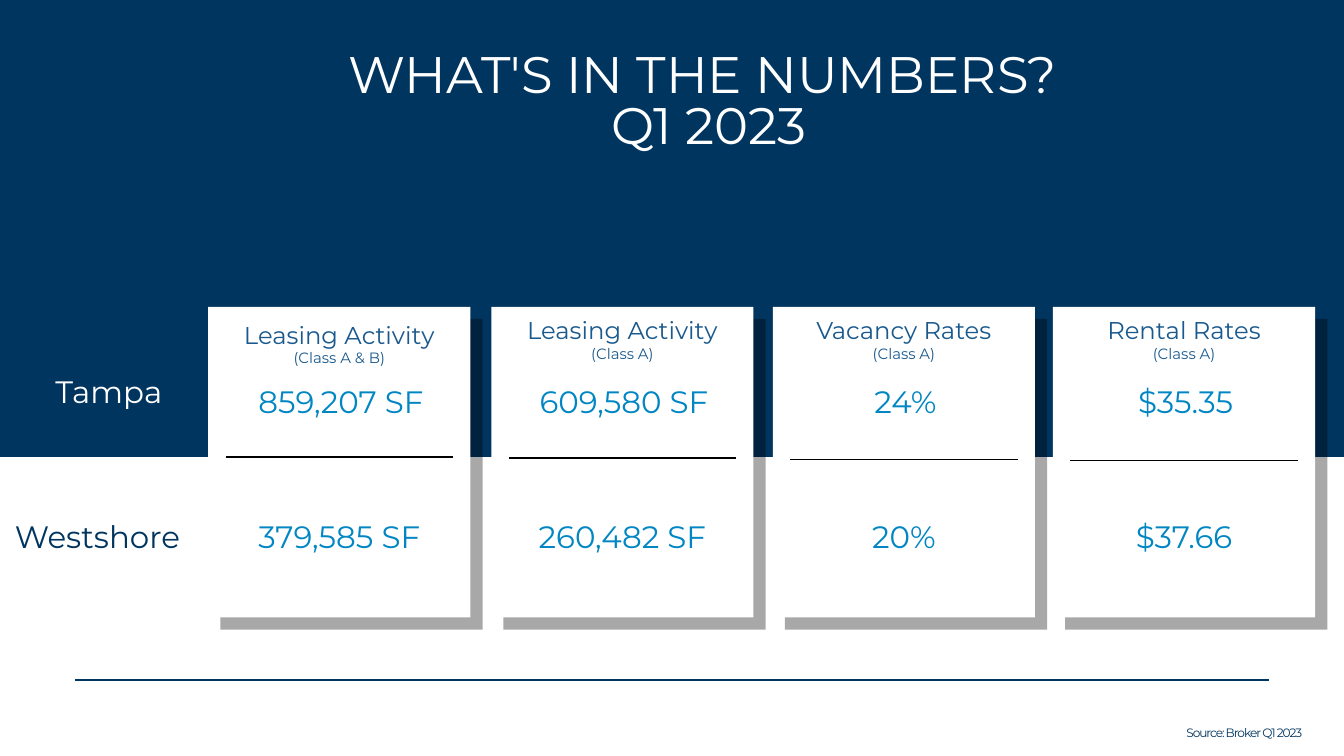
import pptx
import pptx.dml.color
import pptx.enum.shapes
import pptx.enum.text
import pptx.util
from lxml import etree
from pptx.oxml.ns import qn

Cm, Pt = pptx.util.Cm, pptx.util.Pt
RGBColor = pptx.dml.color.RGBColor

NAVY = RGBColor(0x00, 0x35, 0x5F)
HEADING_BLUE = RGBColor(0x19, 0x59, 0x8D)
VALUE_BLUE = RGBColor(0x00, 0x86, 0xC3)
WHITE = RGBColor(0xFF, 0xFF, 0xFF)
BLACK = RGBColor(0x00, 0x00, 0x00)

TITLE = ["WHAT'S IN THE NUMBERS? ", "Q1 2023"]
SOURCE = "Source: Broker Q1 2023"
# region, colour, label left, label top, label width
REGIONS = [
    ("Tampa", WHITE, 1.78, 13.87, 4.67),
    ("Westshore", NAVY, 0, 19.35, 7.37),
]
# card left, heading, class, heading line spacing, values by region, value width
CARDS = [
    (7.87, "Leasing Activity", "(Class A & B)", 36.4, ("859,207 SF", "379,585 SF"), 6.3),
    (18.57, "Leasing Activity", "(Class A)", None, ("609,580 SF", "260,482 SF"), 6.5),
    (29.21, "Vacancy Rates", "(Class A)", None, ("24%", "20%"), 4.5),
    (39.8, "Rental Rates", "(Class A)", None, ("$35.35", "$37.66"), 3.85),
]
VALUE_TOPS = [14.25, 19.33]
VALUE_SHIFTS = [0.06, 0]

CARD_TOP, CARD_WIDTH, CARD_HEIGHT = 11.6, 9.91, 11.74
SHADOW_SHIFT = 0.46
INSET = 0.66
RULE_TOP, RULE_STEP = 17.27, 0.05

deck = pptx.Presentation()
deck.slide_width, deck.slide_height = Cm(50.8), Cm(28.58)
page = deck.slides.add_slide(deck.slide_layouts[6])


def add_rectangle(left, top, width, height, color, opacity=None):
    shape = page.shapes.add_shape(
        pptx.enum.shapes.MSO_SHAPE.RECTANGLE, Cm(left), Cm(top), Cm(width), Cm(height))
    shape.shadow.inherit = False
    shape.fill.solid()
    shape.fill.fore_color.rgb = color
    shape.line.fill.background()
    if opacity is not None:
        fill_color = shape._element.spPr.find(".//" + qn("a:srgbClr"))
        etree.SubElement(fill_color, qn("a:alpha")).set("val", str(opacity * 1000))


def add_rule(left, top, width, color, weight):
    rule = page.shapes.add_connector(
        pptx.enum.shapes.MSO_CONNECTOR.STRAIGHT, Cm(left), Cm(top), Cm(left + width), Cm(top))
    rule.line.color.rgb = color
    rule.line.width = Pt(weight)
    etree.SubElement(rule._element.spPr, qn("a:effectLst"))


def add_text(left, top, width, height, color, lines, tracking=None):
    """Add centred text; each line is (text, size, line spacing or None)."""
    box = page.shapes.add_textbox(Cm(left), Cm(top), Cm(width), Cm(height))
    frame = box.text_frame
    frame.word_wrap = True
    for side in ("left", "top", "right", "bottom"):
        setattr(frame, "margin_" + side, 0)
    for index, (text, size, spacing) in enumerate(lines):
        para = frame.paragraphs[0] if index == 0 else frame.add_paragraph()
        para.alignment = pptx.enum.text.PP_ALIGN.CENTER
        if spacing:
            para.line_spacing = Pt(spacing)
        span = para.add_run()
        span.text = text
        for name, value in {"name": "Montserrat", "size": Pt(size)}.items():
            setattr(span.font, name, value)
        span.font.color.rgb = color
        if tracking:
            span.font._element.set("spc", str(round(tracking * 100)))


add_rectangle(0, 0, 50.8, 17.27, NAVY)
for left, *_ in CARDS:
    add_rectangle(left + SHADOW_SHIFT, CARD_TOP + SHADOW_SHIFT,
                  CARD_WIDTH, CARD_HEIGHT, BLACK, opacity=34)
for left, *_ in CARDS:
    add_rectangle(left, CARD_TOP, CARD_WIDTH, CARD_HEIGHT, WHITE)

add_text(11.3, 1.98, 31.01, 3.96, WHITE, [(line, 55, 55) for line in TITLE])

for column, (left, heading, grade, spacing, values, value_width) in enumerate(CARDS):
    inner_width = CARD_WIDTH - 2 * INSET
    add_text(left + INSET, 11.91, inner_width, 1.9, HEADING_BLUE,
             [(heading, 26, spacing), (grade, 16, None)])
    add_rule(left + INSET, RULE_TOP + column * RULE_STEP, inner_width, BLACK, 1.5)
    value_left = left + (CARD_WIDTH - value_width) / 2
    for value, top, shift in zip(values, VALUE_TOPS, VALUE_SHIFTS):
        add_text(value_left + shift, top, value_width, 1.55, VALUE_BLUE,
                 [(value, 33.1, 46.3)])

for region, color, left, top, width in REGIONS:
    add_text(left, top, width, 1.55, color, [(region, 33.1, 46.3)])

add_rule(2.84, 25.7, 45.12, NAVY, 2.25)
add_text(44.35, 27.33, 5.36, 0.64, NAVY, [(SOURCE, 13, 18.2)], tracking=-1.1)

deck.save("out.pptx")
